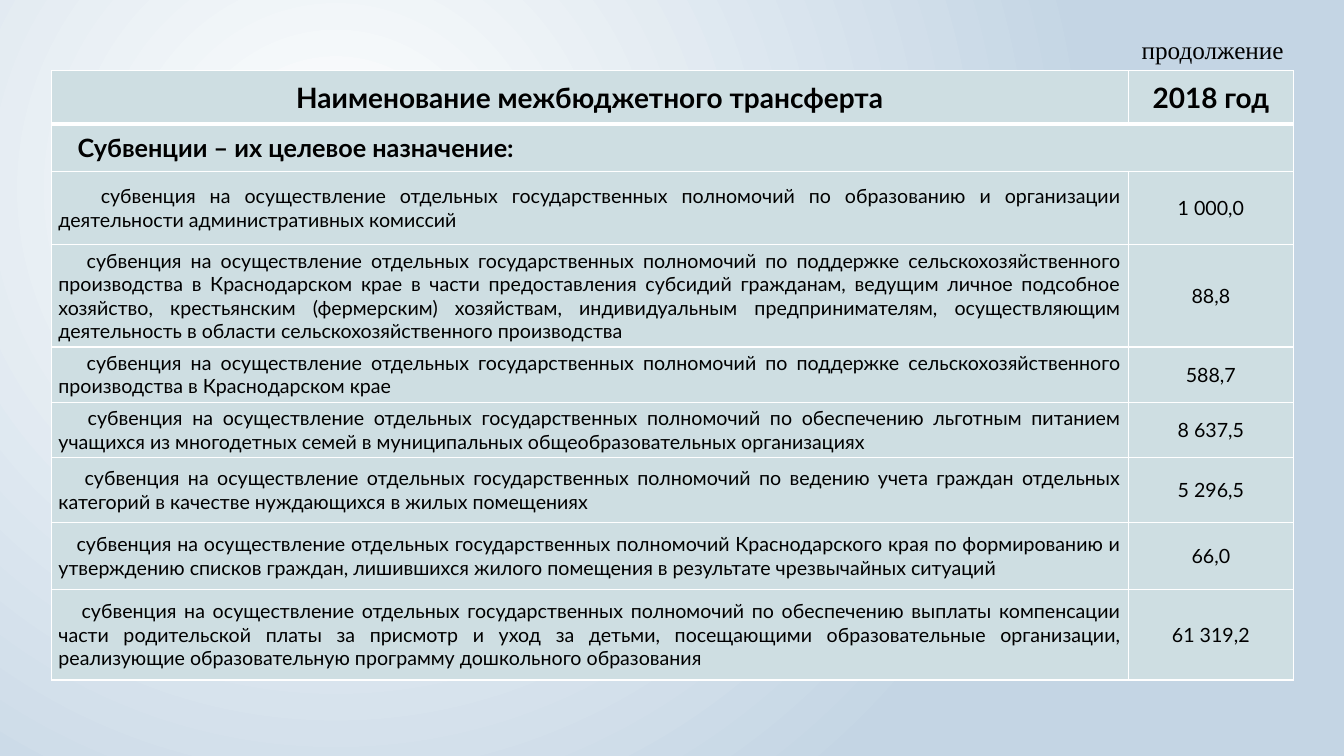
from dataclasses import dataclass

from lxml.etree import SubElement
from pptx import Presentation
from pptx.dml.color import RGBColor
from pptx.enum.text import MSO_ANCHOR, MSO_AUTO_SIZE, PP_ALIGN
from pptx.oxml import parse_xml
from pptx.oxml.ns import nsdecls, qn
from pptx.slide import Slide
from pptx.table import _Cell
from pptx.text.text import TextFrame
from pptx.util import Inches, Pt


@dataclass(frozen=True)
class Theme:
    background_center: str = "FFFFFF"
    background_edge: str = "C4D5E4"
    cell: str = "CEDEE2"
    border: str = "FFFFFF"
    text: str = "000000"
    table_font: str = "Lato"
    note_font: str = "Times New Roman"
    header_size: int = 20
    section_size: int = 18
    body_size: int = 14
    note_size: int = 18
    thin_border: int = 1
    thick_border: int = 3


@dataclass(frozen=True)
class Transfer:
    purpose: str
    amount: str
    height: float
    indent: float


THEME = Theme()
HEADERS = ("Наименование межбюджетного трансферта", "2018 год")
SECTION = "Субвенции – их целевое назначение:"
COLUMN_WIDTHS = (10.68, 1.64)
HEADING_HEIGHTS = (0.53, 0.47)
COMMON_START = "субвенция на осуществление отдельных государственных полномочий "
TRANSFERS = (
    Transfer("по образованию и организации деятельности административных комиссий", "1 000,0", 0.73, 0.42),
    Transfer(
        "по поддержке сельскохозяйственного производства в Краснодарском крае в части предоставления "
        "субсидий гражданам, ведущим личное подсобное хозяйство, крестьянским (фермерским) хозяйствам, "
        "индивидуальным предпринимателям, осуществляющим деятельность в области "
        "сельскохозяйственного производства",
        "88,8", 1.01, 0.28,
    ),
    Transfer("по поддержке сельскохозяйственного производства в Краснодарском крае", "588,7", 0.54, 0.28),
    Transfer(
        "по обеспечению льготным питанием учащихся из многодетных семей "
        "в муниципальных общеобразовательных организациях",
        "8 637,5", 0.54, 0.29,
    ),
    Transfer(
        "по ведению учета граждан отдельных категорий в качестве нуждающихся в жилых помещениях",
        "5 296,5", 0.65, 0.26,
    ),
    Transfer(
        "Краснодарского края по формированию и утверждению списков граждан, "
        "лишившихся жилого помещения в результате чрезвычайных ситуаций",
        "66,0", 0.66, 0.18,
    ),
    Transfer(
        "по обеспечению выплаты компенсации части родительской платы за присмотр и уход за детьми, "
        "посещающими образовательные организации, реализующие образовательную программу "
        "дошкольного образования",
        "61 319,2", 0.9, 0.23,
    ),
)


def write_text(
    frame: TextFrame,
    text: str,
    *,
    size: int,
    font: str = THEME.table_font,
    bold: bool = False,
    align: PP_ALIGN = PP_ALIGN.CENTER,
    indent: float = 0,
) -> None:
    paragraph = frame.paragraphs[0]
    paragraph.alignment = align
    if indent:
        properties = paragraph._p.get_or_add_pPr()
        properties.set("marL", "0")
        properties.set("indent", str(Inches(indent)))
    run = paragraph.add_run()
    run.text = text
    run.font.name = font
    run.font.size = Pt(size)
    run.font.bold = bold
    run.font.color.rgb = RGBColor.from_string(THEME.text)


def style_cell(cell: _Cell, top: int, bottom: int) -> None:
    cell.vertical_anchor = MSO_ANCHOR.MIDDLE
    cell.margin_left = cell.margin_right = Inches(0.07)
    cell.margin_top = cell.margin_bottom = Inches(0.04)
    cell.fill.solid()
    cell.fill.fore_color.rgb = RGBColor.from_string(THEME.cell)
    widths = {"lnL": THEME.thin_border, "lnR": THEME.thin_border, "lnT": top, "lnB": bottom}
    properties = cell._tc.get_or_add_tcPr()
    for position, (side, width) in enumerate(widths.items()):
        line = parse_xml(f'<a:{side} {nsdecls("a")} w="{Pt(width)}"/>')
        fill = SubElement(line, qn("a:solidFill"))
        SubElement(fill, qn("a:srgbClr"), val=THEME.border)
        properties.insert(position, line)


def paint_background(slide: Slide) -> None:
    fill = slide.background.fill
    fill.gradient()
    for stop, color in zip(fill.gradient_stops, (THEME.background_center, THEME.background_edge)):
        stop.color.rgb = RGBColor.from_string(color)
    direction = next(slide.element.iter(qn("a:lin")))
    radial = parse_xml(
        f'<a:path {nsdecls("a")} path="circle">'
        '<a:fillToRect l="50000" t="50000" r="100000" b="100000"/></a:path>'
    )
    direction.getparent().replace(direction, radial)


def add_transfer_table(slide: Slide) -> None:
    heights = (*HEADING_HEIGHTS, *(transfer.height for transfer in TRANSFERS))
    table = slide.shapes.add_table(
        len(heights), len(COLUMN_WIDTHS), Inches(0.51), Inches(0.7),
        Inches(sum(COLUMN_WIDTHS)), Inches(sum(heights)),
    ).table
    for column, width in zip(table.columns, COLUMN_WIDTHS):
        column.width = Inches(width)
    for index, height in enumerate(heights):
        table.rows[index].height = Inches(height)
        top = THEME.thick_border if index == 1 else THEME.thin_border
        bottom = THEME.thick_border if index == 0 else THEME.thin_border
        for cell in table.rows[index].cells:
            style_cell(cell, top, bottom)
    for column, header in enumerate(HEADERS):
        write_text(table.cell(0, column).text_frame, header, size=THEME.header_size, bold=True)
    section = table.cell(1, 0)
    section.merge(table.cell(1, 1))
    write_text(
        section.text_frame, SECTION, size=THEME.section_size, bold=True,
        align=PP_ALIGN.JUSTIFY, indent=0.19,
    )
    for row, transfer in enumerate(TRANSFERS, start=len(HEADING_HEIGHTS)):
        write_text(
            table.cell(row, 0).text_frame, COMMON_START + transfer.purpose,
            size=THEME.body_size, align=PP_ALIGN.JUSTIFY, indent=transfer.indent,
        )
        write_text(table.cell(row, 1).text_frame, transfer.amount, size=THEME.body_size)


def add_continuation_note(slide: Slide) -> None:
    frame = slide.shapes.add_textbox(Inches(10.78), Inches(0.29), Inches(2.05), Inches(0.4)).text_frame
    frame.word_wrap = True
    frame.auto_size = MSO_AUTO_SIZE.SHAPE_TO_FIT_TEXT
    write_text(frame, "продолжение", size=THEME.note_size, font=THEME.note_font, align=PP_ALIGN.RIGHT)


def main() -> None:
    presentation = Presentation()
    presentation.slide_width = Inches(13.33)
    presentation.slide_height = Inches(7.5)
    slide = presentation.slides.add_slide(presentation.slide_layouts[6])
    paint_background(slide)
    add_transfer_table(slide)
    add_continuation_note(slide)
    presentation.save("out.pptx")


if __name__ == "__main__":
    main()
